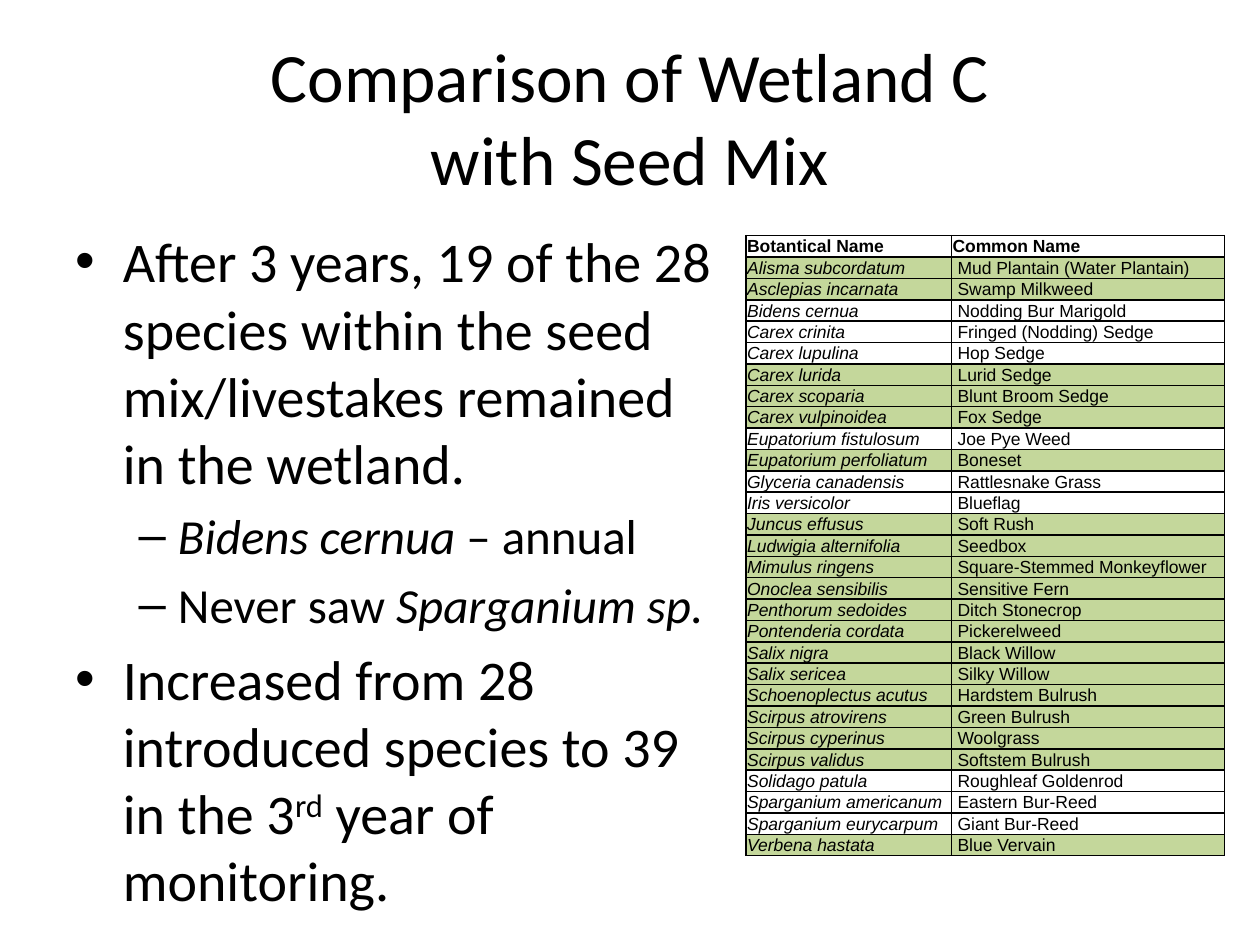
from dataclasses import dataclass
from lxml.etree import SubElement
from pptx import Presentation
from pptx.dml.color import RGBColor as RGB
from pptx.enum.text import MSO_ANCHOR as Anchor, MSO_AUTO_SIZE as Fit, PP_ALIGN as Align
from pptx.oxml.ns import qn
from pptx.util import Inches, Pt


@dataclass(frozen=True)
class Theme:
    ink: RGB = RGB(0, 0, 0)
    white: RGB = RGB(255, 255, 255)
    green: RGB = RGB(0xC4, 0xD7, 0x9B)
    text_font: str = "Calibri"
    table_font: str = "Arial"
    title: float = 39.6
    levels: tuple = (32, 28)
    cell: float = 10


theme = Theme()


def style(par, name, size):
    par.font.name = name
    par.font.size = Pt(size)
    par.font.color.rgb = theme.ink


def add_borders(cell):
    props = cell._tc.get_or_add_tcPr()
    for side in ("lnL", "lnR", "lnT", "lnB"):
        line = SubElement(props, qn(f"a:{side}"), w=str(Pt(1)))
        fill = SubElement(line, qn("a:solidFill"))
        SubElement(fill, qn("a:srgbClr"), val=str(theme.ink))


prs = Presentation()
prs.slide_width, prs.slide_height = Inches(10), Inches(7.5)
slide = prs.slides.add_slide(prs.slide_layouts[1])

title = slide.shapes.title
title.left, title.top = Inches(0.5), Inches(0.3)
title.width, title.height = Inches(9), Inches(1.25)
frame = title.text_frame
frame.text = "Comparison of Wetland C\vwith Seed Mix"
frame.auto_size = Fit.NONE
frame.vertical_anchor = Anchor.MIDDLE
frame.paragraphs[0].alignment = Align.CENTER
style(frame.paragraphs[0], theme.text_font, theme.title)

# Each point: level, then runs of (text, kind)
points = [
    (0, [("After 3 years, 19 of the 28 species within the seed "
          "mix/livestakes remained in the wetland.", "")]),
    (1, [("Bidens cernua ", "italic"), ("– annual", "")]),
    (1, [("Never saw ", ""), ("Sparganium sp.", "italic")]),
    (0, [("Increased from 28 introduced species to 39 in the 3", ""),
         ("rd", "super"), (" year of monitoring.", "")]),
]
body = slide.placeholders[1]
body.left, body.top = Inches(0.5), Inches(1.75)
body.width, body.height = Inches(5.33), Inches(5.67)
frame = body.text_frame
frame.auto_size = Fit.NONE
for i, (level, runs) in enumerate(points):
    par = frame.add_paragraph() if i else frame.paragraphs[0]
    par.level = level
    if i == 0:
        par.space_before = Pt(0)
    style(par, theme.text_font, theme.levels[level])
    for text, kind in runs:
        run = par.add_run()
        run.text = text
        if kind == "italic":
            run.font.italic = True
        elif kind == "super":
            run.font._element.set("baseline", "30000")

# Botanical name, common name, still found in the wetland
plants = [
    ("Alisma subcordatum", "Mud Plantain (Water Plantain)", True),
    ("Asclepias incarnata", "Swamp Milkweed", True),
    ("Bidens cernua", "Nodding Bur Marigold", False),
    ("Carex crinita", "Fringed (Nodding) Sedge", False),
    ("Carex lupulina", "Hop Sedge", False),
    ("Carex lurida", "Lurid Sedge", True),
    ("Carex scoparia", "Blunt Broom Sedge", True),
    ("Carex vulpinoidea", "Fox Sedge", True),
    ("Eupatorium fistulosum", "Joe Pye Weed", False),
    ("Eupatorium perfoliatum", "Boneset", True),
    ("Glyceria canadensis", "Rattlesnake Grass", False),
    ("Iris versicolor", "Blueflag", False),
    ("Juncus effusus", "Soft Rush", True),
    ("Ludwigia alternifolia", "Seedbox", True),
    ("Mimulus ringens", "Square-Stemmed Monkeyflower", True),
    ("Onoclea sensibilis", "Sensitive Fern", True),
    ("Penthorum sedoides", "Ditch Stonecrop", True),
    ("Pontenderia cordata", "Pickerelweed", True),
    ("Salix nigra", "Black Willow", True),
    ("Salix sericea", "Silky Willow", True),
    ("Schoenoplectus acutus", "Hardstem Bulrush", True),
    ("Scirpus atrovirens", "Green Bulrush", True),
    ("Scirpus cyperinus", "Woolgrass", True),
    ("Scirpus validus", "Softstem Bulrush", True),
    ("Solidago patula", "Roughleaf Goldenrod", False),
    ("Sparganium americanum", "Eastern Bur-Reed", False),
    ("Sparganium eurycarpum", "Giant Bur-Reed", False),
    ("Verbena hastata", "Blue Vervain", True),
]
rows = [("Botantical Name", "Common Name", False)] + plants
height = Inches(0.17)
table = slide.shapes.add_table(len(rows), 2, Inches(5.92), Inches(1.87),
                               Inches(3.8), height * len(rows)).table
table.first_row = table.horz_banding = False
table.columns[0].width, table.columns[1].width = Inches(1.63), Inches(2.17)
for r, (latin, common, found) in enumerate(rows):
    table.rows[r].height = height
    for c, text in enumerate((latin, common)):
        cell = table.cell(r, c)
        add_borders(cell)
        cell.fill.solid()
        cell.fill.fore_color.rgb = theme.green if found else theme.white
        cell.vertical_anchor = Anchor.MIDDLE
        cell.margin_left = Inches(0.05 if r and c else 0.01)
        cell.margin_right = cell.margin_top = Inches(0.01)
        cell.margin_bottom = 0
        cell.text = text
        par = cell.text_frame.paragraphs[0]
        style(par, theme.table_font, theme.cell)
        par.font.bold = r == 0
        par.font.italic = r > 0 and c == 0

prs.save("out.pptx")
